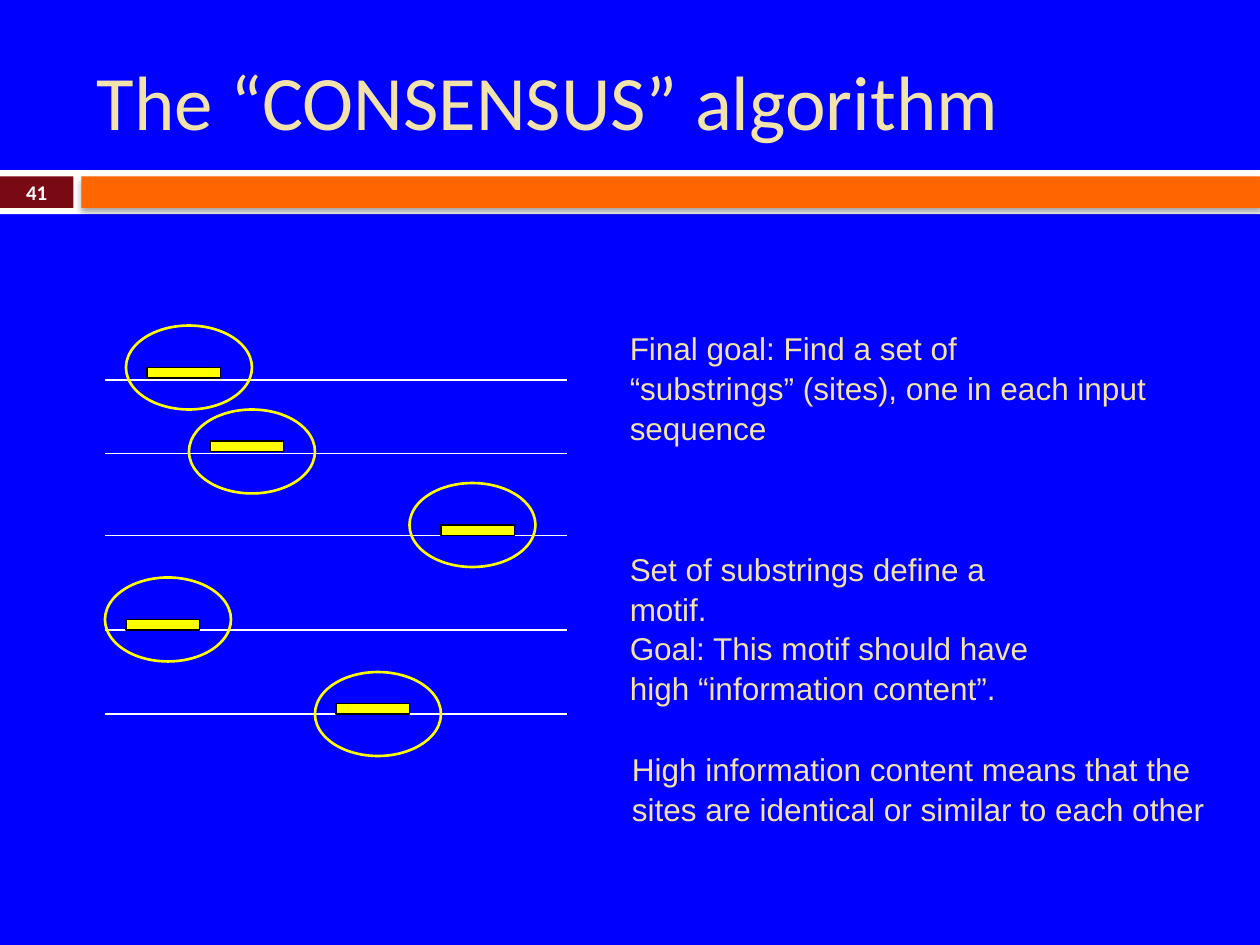
"""Build the slide on the CONSENSUS algorithm."""
from dataclasses import dataclass

from lxml.etree import SubElement
from pptx import Presentation
from pptx.dml.color import RGBColor
from pptx.enum.shapes import MSO_CONNECTOR, MSO_SHAPE
from pptx.enum.text import MSO_ANCHOR, MSO_AUTO_SIZE, PP_ALIGN
from pptx.oxml import parse_xml
from pptx.oxml.ns import nsdecls, qn
from pptx.util import Pt


@dataclass(frozen=True)
class Theme:
    """Hold the colours, fonts and type sizes."""
    background: str = "0000FF"
    white: str = "FFFFFF"
    black: str = "000000"
    maroon: str = "790A14"
    orange: str = "FF6600"
    yellow: str = "FFFF00"
    cream: str = "F2E2AB"
    heading_font: str = "Calibri"
    body_font: str = "Arial"
    title_size: float = 44
    body_size: float = 18
    number_size: float = 11.9
    thin: float = 0.75
    thick: float = 1.5


def write_text(frame, text, *, font, size, color, bold=False,
               align=PP_ALIGN.LEFT, anchor=MSO_ANCHOR.TOP, spacing=1.0):
    """Fill a text frame, one paragraph for each line of text."""
    frame.word_wrap = True
    frame.auto_size = MSO_AUTO_SIZE.NONE
    frame.vertical_anchor = anchor
    frame.text = text
    for paragraph in frame.paragraphs:
        paragraph.alignment = align
        paragraph.line_spacing = spacing
        paragraph.font.name = font
        paragraph.font.size = Pt(size)
        paragraph.font.bold = bold
        paragraph.font.color.rgb = RGBColor.from_string(color)


class SlideBuilder:
    """Hold the theme and the current slide."""

    def __init__(self, slide, theme):
        """Keep the slide and paint its background."""
        self.slide = slide
        self.theme = theme
        fill = slide.background.fill
        fill.solid()
        fill.fore_color.rgb = RGBColor.from_string(theme.background)

    def title(self, text, left, top, width, height):
        """Place and fill the title placeholder."""
        shape = self.slide.shapes.title
        shape.left, shape.top = Pt(left), Pt(top)
        shape.width, shape.height = Pt(width), Pt(height)
        write_text(shape.text_frame, text, font=self.theme.heading_font,
                   size=self.theme.title_size, color=self.theme.cream,
                   anchor=MSO_ANCHOR.MIDDLE)

    def shape(self, kind, left, top, width, height, fill=None, line=None, weight=0):
        """Add a preset shape with optional fill and outline."""
        shape = self.slide.shapes.add_shape(
            kind, Pt(left), Pt(top), Pt(width), Pt(height))
        shape.shadow.inherit = False
        if fill:
            shape.fill.solid()
            shape.fill.fore_color.rgb = RGBColor.from_string(fill)
        else:
            shape.fill.background()
        if line:
            shape.line.color.rgb = RGBColor.from_string(line)
            shape.line.width = Pt(weight)
        else:
            shape.line.fill.background()
        return shape

    def drop_shadow(self, shape):
        """Give a shape a soft shadow below it."""
        effects = shape._element.spPr.find(qn("a:effectLst"))
        effects.append(parse_xml(
            f'<a:outerShdw {nsdecls("a")} blurRad="{Pt(3)}" dist="{Pt(2)}" '
            f'dir="5400000" rotWithShape="0"><a:srgbClr val="{self.theme.black}">'
            '<a:alpha val="35000"/></a:srgbClr></a:outerShdw>'))

    def line(self, left, right, y):
        """Add a thin horizontal sequence line."""
        connector = self.slide.shapes.add_connector(
            MSO_CONNECTOR.STRAIGHT, Pt(left), Pt(y), Pt(right), Pt(y))
        connector.line.color.rgb = RGBColor.from_string(self.theme.white)
        connector.line.width = Pt(self.theme.thin)
        SubElement(connector._element.spPr, qn("a:effectLst"))

    def text(self, text, left, top, width, height, **text_format):
        """Add a text box."""
        box = self.slide.shapes.add_textbox(Pt(left), Pt(top), Pt(width), Pt(height))
        write_text(box.text_frame, text, **text_format)

    def body(self, text, left, top, width, height):
        """Add a text box in the body style."""
        self.text(text, left, top, width, height, font=self.theme.body_font,
                  size=self.theme.body_size, color=self.theme.cream, spacing=1.05)


def main():
    """Build and save the presentation."""
    presentation = Presentation()
    presentation.slide_width, presentation.slide_height = Pt(720), Pt(540)
    theme = Theme()
    slide = presentation.slides.add_slide(presentation.slide_layouts[5])
    builder = SlideBuilder(slide, theme)

    builder.shape(MSO_SHAPE.RECTANGLE, 0, 97.2, 720, 25.2, theme.white)
    builder.shape(MSO_SHAPE.RECTANGLE, 0, 100.8, 42, 18, theme.maroon)
    bar = builder.shape(MSO_SHAPE.RECTANGLE, 46.5, 100.8, 673.5, 18, theme.orange)
    builder.drop_shadow(bar)
    builder.title("The “CONSENSUS” algorithm", 48, 18, 642, 78)

    for y in (217.2, 259.2, 306, 360, 408):
        builder.line(60, 324, y)
    for left, top in ((84, 210), (120, 252), (252, 300), (72, 354), (192, 402)):
        builder.shape(MSO_SHAPE.RECTANGLE, left, top, 42, 6,
                      theme.yellow, theme.black, theme.thin)
    for left, top in ((72, 186), (108, 234), (234, 276), (60, 330), (180, 384)):
        builder.shape(MSO_SHAPE.OVAL, left, top, 72, 48,
                      line=theme.yellow, weight=theme.thick)

    builder.body("Final goal: Find a set of\n"
                 "“substrings” (sites), one in each input\nsequence",
                 352.8, 183.6, 312.5, 72.7)
    builder.body("Set of substrings define a motif.\n"
                 "Goal: This motif should have\nhigh “information content”.",
                 352.8, 309.6, 247, 72.7)
    builder.body("High information content means that the sites are identical "
                 "or similar to each other", 354, 424, 366, 51)
    builder.text("41", 0, 100, 42, 19.5, font=theme.heading_font,
                 size=theme.number_size, color=theme.white, bold=True,
                 align=PP_ALIGN.CENTER, anchor=MSO_ANCHOR.MIDDLE)
    presentation.save("out.pptx")


if __name__ == "__main__":
    main()
